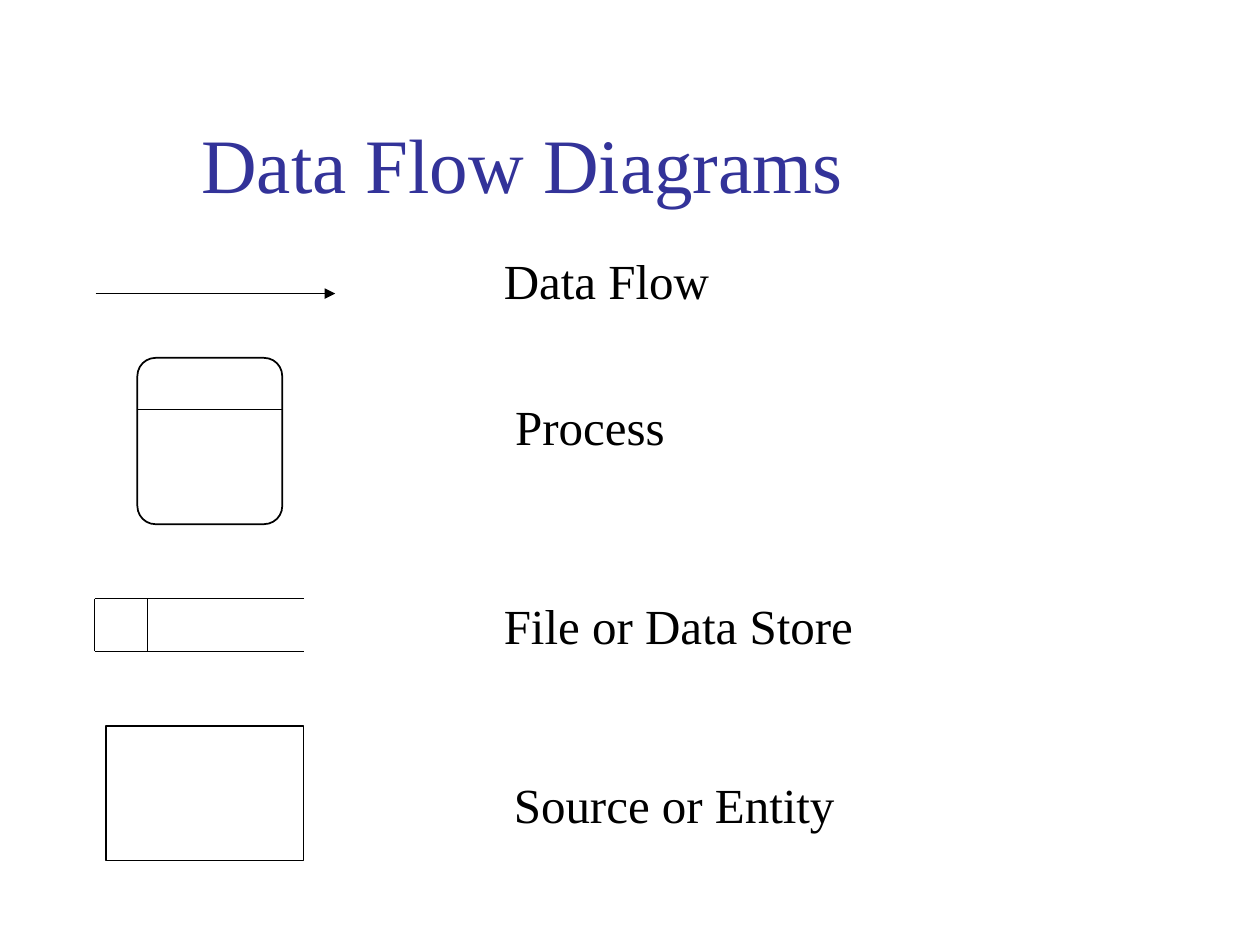
import pptx
import pptx.dml.color
import pptx.enum.shapes
import pptx.enum.text
import pptx.oxml.ns
import pptx.util
from lxml import etree
from pptx.util import Inches

COLORS = {"title": "333399", "ink": "000000"}
FONT = "Times New Roman"
SHAPES = pptx.enum.shapes.MSO_SHAPE
ANCHORS = pptx.enum.text.MSO_ANCHOR
AUTO_SIZES = pptx.enum.text.MSO_AUTO_SIZE


def rgb(name):
    return pptx.dml.color.RGBColor.from_string(COLORS[name])


def style_line(line):
    line.color.rgb = rgb("ink")
    line.width = pptx.util.Pt(1)


def add_line(slide, x1, y1, x2, y2, arrow=False):
    connector = slide.shapes.add_connector(
        pptx.enum.shapes.MSO_CONNECTOR.STRAIGHT,
        Inches(x1), Inches(y1), Inches(x2), Inches(y2))
    style_line(connector.line)
    if arrow:
        outline = connector.line._get_or_add_ln()
        etree.SubElement(outline, pptx.oxml.ns.qn("a:tailEnd"), type="triangle")
    etree.SubElement(connector._element.spPr, pptx.oxml.ns.qn("a:effectLst"))


def add_outline(slide, kind, left, top, width, height):
    shape = slide.shapes.add_shape(
        kind, Inches(left), Inches(top), Inches(width), Inches(height))
    shape.shadow.inherit = False
    shape.fill.background()
    style_line(shape.line)
    return shape


def add_text(slide, text, left, top, width, height, size, color):
    box = slide.shapes.add_textbox(
        Inches(left), Inches(top), Inches(width), Inches(height))
    text_frame = box.text_frame
    text_frame.text = text
    font = text_frame.paragraphs[0].runs[0].font
    font.name = FONT
    font.size = pptx.util.Pt(size)
    font.color.rgb = rgb(color)
    return text_frame


def add_title(slide, left, top, width, height):
    text_frame = add_text(slide, "Data Flow Diagrams", left, top, width, height, 44, "title")
    text_frame.word_wrap = True
    text_frame.vertical_anchor = ANCHORS.BOTTOM


def add_label(slide, text, left, top, width, height=0.56):
    text_frame = add_text(slide, text, left, top, width, height, 28, "ink")
    text_frame.word_wrap = False
    text_frame.auto_size = AUTO_SIZES.SHAPE_TO_FIT_TEXT


def add_data_flow(slide, left, top, width):
    add_line(slide, left, top, left + width, top, arrow=True)


def add_process(slide, left, top, width, height):
    body = add_outline(slide, SHAPES.ROUNDED_RECTANGLE, left, top, width, height)
    body.adjustments[0] = 0.125
    divider = top + 0.41
    add_line(slide, left, divider, left + width, divider)


def add_data_store(slide, left, top, width, height):
    for y in (top, top + height):
        add_line(slide, left, y, left + width, y)
    for x in (left, left + height):
        add_line(slide, x, top, x, top + height)


def add_entity(slide, left, top, width, height):
    add_outline(slide, SHAPES.RECTANGLE, left, top, width, height)


def main():
    presentation = pptx.Presentation()
    presentation.slide_width = Inches(10)
    presentation.slide_height = Inches(7.5)
    slide = presentation.slides.add_slide(presentation.slide_layouts[6])

    add_title(slide, 1.5, 0.5, 8.5, 1.21)
    add_data_flow(slide, 0.76, 2.33, 1.9)
    add_process(slide, 1.09, 2.84, 1.15, 1.32)
    add_data_store(slide, 0.75, 4.75, 1.66, 0.42)
    add_entity(slide, 0.84, 5.76, 1.57, 1.07)

    labels = [
        ("Data Flow", 3.9, 1.94, 1.83),
        ("Process", 3.99, 3.1, 1.39),
        ("File or Data Store", 3.9, 4.68, 2.97),
        ("Source or Entity", 3.98, 6.1, 2.75),
    ]
    for text, left, top, width in labels:
        add_label(slide, text, left, top, width)

    presentation.save("out.pptx")


if __name__ == "__main__":
    main()
